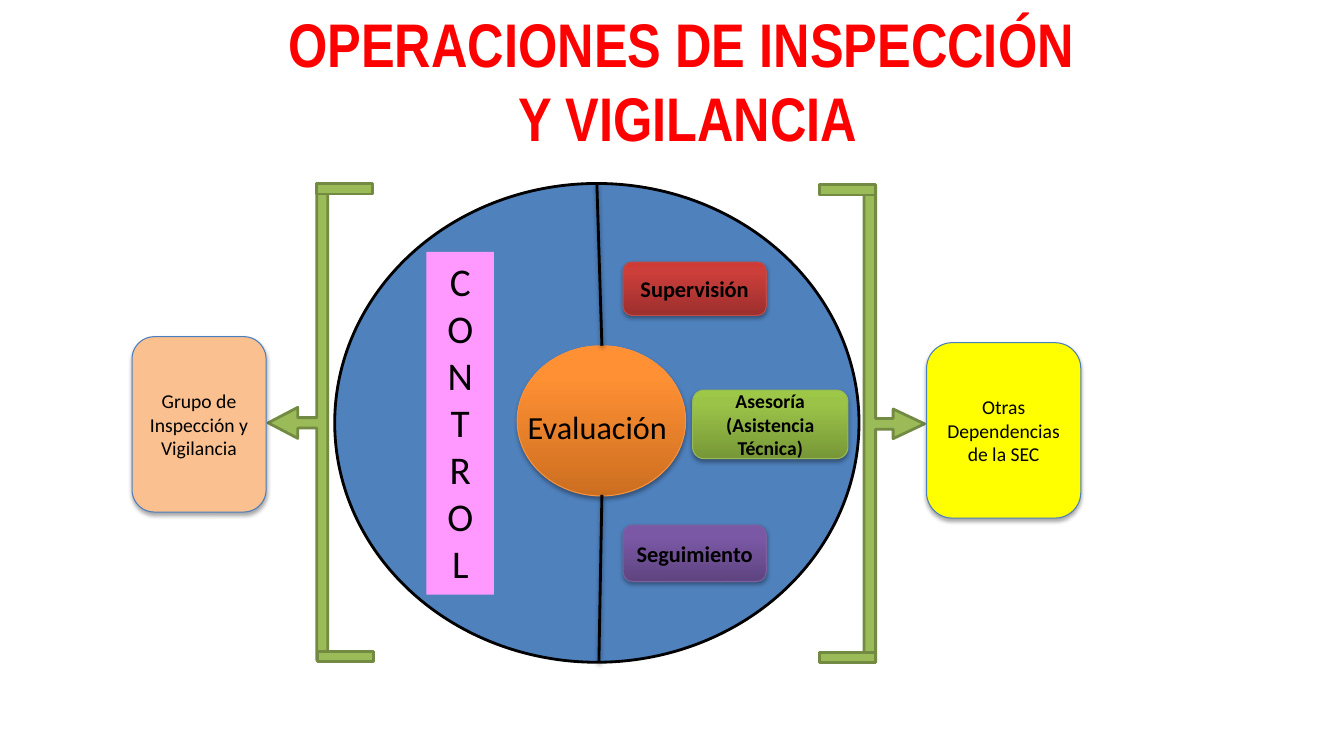
import copy

import pptx
import pptx.dml.color
import pptx.enum.shapes
import pptx.enum.text
import pptx.oxml
import pptx.oxml.ns
import pptx.util

RGB = pptx.dml.color.RGBColor
KIND = pptx.enum.shapes.MSO_SHAPE
ANCHOR = pptx.enum.text.MSO_ANCHOR
ALIGN = pptx.enum.text.PP_ALIGN
qn = pptx.oxml.ns.qn

SCALE = 9144  # EMU in one px, 100 px to the inch
BLACK = RGB(0x00, 0x00, 0x00)
RED = RGB(0xFF, 0x00, 0x00)
BLUE = RGB(0x4F, 0x81, 0xBD)
EDGE = RGB(0x4B, 0x7E, 0xBC)
PINK = RGB(0xFF, 0x99, 0xFF)
PEACH = RGB(0xFA, 0xC0, 0x90)
YELLOW = RGB(0xFF, 0xFF, 0x00)
GREEN = RGB(0x9B, 0xBB, 0x59)
OLIVE = RGB(0x73, 0x8A, 0x42)

# Gradient colours from bottom to top, then the outline
ORANGE = ([RGB(0xCC, 0x6E, 0x20), RGB(0xFF, 0x90, 0x34), RGB(0xFF, 0x91, 0x36)],
          RGB(0xF6, 0x92, 0x40))
LIME = ([RGB(0x77, 0x97, 0x37), RGB(0x9B, 0xC3, 0x48), RGB(0x9D, 0xC7, 0x46)],
        RGB(0x98, 0xB9, 0x55))
PURPLE = ([RGB(0x5F, 0x44, 0x80), RGB(0x7B, 0x58, 0xA6), RGB(0x7C, 0x57, 0xA8)],
          RGB(0x7D, 0x60, 0xA0))
BRICK = ([RGB(0x9C, 0x2F, 0x2D), RGB(0xCB, 0x3E, 0x3A), RGB(0xCE, 0x3B, 0x37)],
         RGB(0xBF, 0x4C, 0x48))


def px(*sizes):
    return [pptx.util.Emu(size * SCALE) for size in sizes]


def shade(effects, alpha, drop):
    """Add a soft black shadow, drop points below, to an effect list."""
    effects.append(pptx.oxml.parse_xml(
        '<a:outerShdw xmlns:a="http://schemas.openxmlformats.org/drawingml/2006/main" '
        f'blurRad="40000" dist="{int(drop * 12700)}" dir="5400000" rotWithShape="0">'
        f'<a:srgbClr val="000000"><a:alpha val="{alpha * 1000}"/></a:srgbClr>'
        '</a:outerShdw>'))


def blend(shape, tones):
    shape.fill.gradient()
    shape.fill.gradient_angle = 90
    stops = shape._element.spPr.find(qn("a:gradFill")).find(qn("a:gsLst"))
    stops.append(copy.deepcopy(stops[-1]))
    for stop, tone, place in zip(shape.fill.gradient_stops, tones, (0, 0.8, 1)):
        stop.color.rgb = tone
        stop.position = place


def write(frame, lines, size, font="Calibri", color=BLACK, bold=False):
    frame.word_wrap = True
    for index, line in enumerate(lines):
        para = frame.paragraphs[0] if index == 0 else frame.add_paragraph()
        para.alignment = ALIGN.CENTER
        run = para.add_run()
        run.text = line
        run.font.name = font
        run.font.size = pptx.util.Pt(size)
        run.font.bold = bold
        run.font.color.rgb = color


def draw(slide, kind, box, fill, edge=None, width=0.75, adjust=()):
    """Draw a preset shape; a list as fill makes a gradient."""
    shape = slide.shapes.add_shape(kind, *px(*box))
    shape.shadow.inherit = False
    for index, value in enumerate(adjust):
        shape.adjustments[index] = value
    if isinstance(fill, list):
        blend(shape, fill)
    else:
        shape.fill.solid()
        shape.fill.fore_color.rgb = fill
    if edge is None:
        shape.line.fill.background()
    else:
        shape.line.color.rgb = edge
        shape.line.width = pptx.util.Pt(width)
    return shape


def raised(slide, kind, box, fill, edge):
    shape = draw(slide, kind, box, fill, edge)
    shade(shape._element.spPr.find(qn("a:effectLst")), 35, 1.8)
    return shape


def card(slide, box, text, size, fill, edge, bold=False):
    shape = raised(slide, KIND.ROUNDED_RECTANGLE, box, fill, edge)
    frame = shape.text_frame
    frame.margin_left = frame.margin_right = px(5)[0]
    frame.vertical_anchor = ANCHOR.MIDDLE
    write(frame, [text], size, bold=bold)


def spoke(slide, *ends):
    line = slide.shapes.add_connector(pptx.enum.shapes.MSO_CONNECTOR.STRAIGHT, *px(*ends))
    line.line.color.rgb = BLACK
    line.line.width = pptx.util.Pt(2)
    effects = pptx.oxml.parse_xml(
        '<a:effectLst xmlns:a="http://schemas.openxmlformats.org/drawingml/2006/main"/>')
    shade(effects, 38, 1.6)
    line._element.spPr.append(effects)


def head(slide):
    title = slide.shapes.title
    title.left, title.top, title.width, title.height = px(51, 1, 1250, 144)
    frame = title.text_frame
    frame.auto_size = pptx.enum.text.MSO_AUTO_SIZE.NONE
    frame.vertical_anchor = ANCHOR.TOP
    write(frame, ["OPERACIONES DE INSPECCIÓN", " Y VIGILANCIA"], 44,
          "Arial Narrow", RED, True)


def wheel(slide):
    draw(slide, KIND.OVAL, (332, 182, 520, 475), BLUE, BLACK, 2)
    raised(slide, KIND.OVAL, (513, 343, 167, 149), *ORANGE)
    strip = draw(slide, KIND.RECTANGLE, (423, 250, 67, 340), PINK)
    strip.text_frame.vertical_anchor = ANCHOR.TOP
    write(strip.text_frame, "CONTROL", 28)
    spoke(slide, 592, 182, 597, 343)
    spoke(slide, 597, 491, 594, 657)


def clamps(slide):
    """Draw the two brackets that point away from the wheel."""
    draw(slide, KIND.LEFT_ARROW_CALLOUT, (266, 184, 59, 471), GREEN, OLIVE, 2,
         (0.176, 0.26, 0.497, 0.183))
    draw(slide, KIND.RIGHT_ARROW_CALLOUT, (857, 184, 60, 473), GREEN, OLIVE, 2,
         (0.178, 0.245, 0.519, 0.191))
    for left, top in ((803, 631), (305, 630), (803, 167), (304, 166)):
        draw(slide, KIND.MATH_MINUS, (left, top, 75, 43), GREEN, OLIVE, 2)


def main():
    deck = pptx.Presentation()
    deck.slide_width, deck.slide_height = px(1333, 750)
    slide = deck.slides.add_slide(deck.slide_layouts[5])
    head(slide)
    wheel(slide)
    clamps(slide)
    card(slide, (131, 334, 133, 174), "Grupo de Inspección y Vigilancia", 14, PEACH, EDGE)
    card(slide, (919, 340, 153, 174), "Otras Dependencias de la SEC", 14, YELLOW, EDGE)
    card(slide, (687, 387, 154, 68), "Asesoría (Asistencia Técnica)", 14, *LIME, bold=True)
    card(slide, (618, 521, 142, 56), "Seguimiento", 16, *PURPLE, bold=True)
    card(slide, (618, 260, 142, 53), "Supervisión", 16, *BRICK, bold=True)
    label = slide.shapes.add_textbox(*px(483, 399, 219, 63))
    write(label.text_frame, ["Evaluación"], 23)
    deck.save("out.pptx")


if __name__ == "__main__":
    main()
